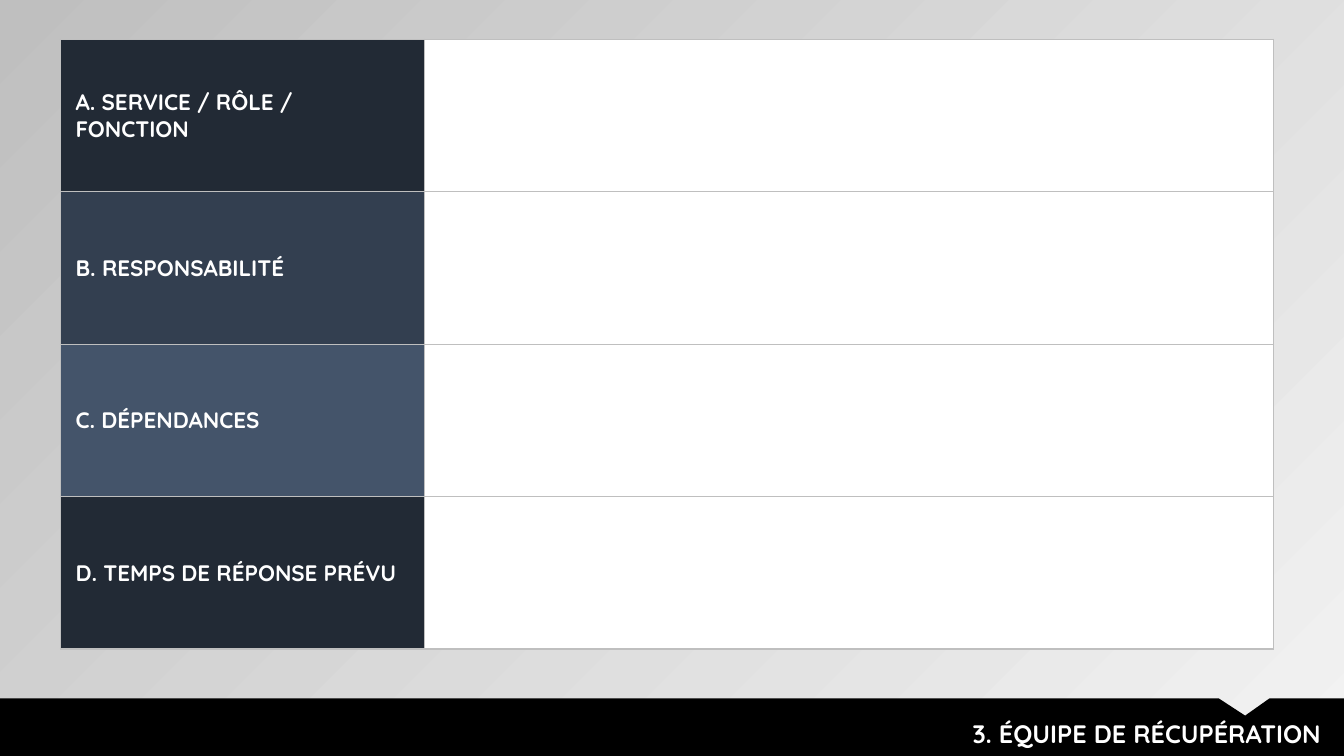
from lxml.etree import SubElement
from pptx import Presentation
from pptx.dml.color import RGBColor
from pptx.enum.text import MSO_ANCHOR as ANCHOR, PP_ALIGN as ALIGN
from pptx.oxml.ns import qn
from pptx.util import Inches, Pt

WIDTH, HEIGHT = 13.33, 7.5
FONT = "Quicksand"
BORDER = "BFBFBF"
ROWS = [
    ("A. SERVICE / RÔLE / FONCTION", "222A35"),
    ("B. RESPONSABILITÉ", "333F50"),
    ("C. DÉPENDANCES", "44546A"),
    ("D. TEMPS DE RÉPONSE PRÉVU", "222A35"),
]


def color(value):
    """Turn a hex string into a colour."""
    return RGBColor.from_string(value)


def fill_solid(obj, value):
    """Fill a shape or cell with one colour."""
    obj.fill.solid()
    obj.fill.fore_color.rgb = color(value)


def write(tf, text, size=16, value="FFFFFF", bold=True, align=ALIGN.LEFT):
    """Put one formatted paragraph in a text frame."""
    tf.word_wrap = True
    p = tf.paragraphs[0]
    p.alignment = align
    r = p.add_run()
    r.text = text
    r.font.name = FONT
    r.font.size = Pt(size)
    r.font.bold = bold
    r.font.color.rgb = color(value)


def add_borders(cell, value, width=1):
    """Draw all four borders of a cell, ahead of its fill."""
    tc_pr = cell._tc.get_or_add_tcPr()
    for i, side in enumerate(("a:lnL", "a:lnR", "a:lnT", "a:lnB")):
        ln = SubElement(tc_pr, qn(side), w=str(Pt(width)))
        solid = SubElement(ln, qn("a:solidFill"))
        SubElement(solid, qn("a:srgbClr"), val=value)
        tc_pr.insert(i, ln)


def set_background(s):
    """Shade the slide from the lower right to the upper left."""
    fill = s.background.fill
    fill.gradient()
    fill.gradient_angle = 135
    for stop, position, value in zip(fill.gradient_stops, (0, 1), ("F2F2F2", "BFBFBF")):
        stop.position = position
        stop.color.rgb = color(value)


def add_team_table(s, left, top, width, height, label_width=3.61):
    """Place the table of labels and empty answer cells."""
    box = [Inches(v) for v in (left, top, width, height)]
    table = s.shapes.add_table(len(ROWS), 2, *box).table
    table.first_row = table.horz_banding = False
    table.columns[0].width = Inches(label_width)
    table.columns[1].width = Inches(width - label_width)
    for i, (label, value) in enumerate(ROWS):
        table.rows[i].height = Inches(height / len(ROWS))
        for cell, fill in zip(table.rows[i].cells, (value, "FFFFFF")):
            fill_solid(cell, fill)
            add_borders(cell, BORDER)
        cell = table.cell(i, 0)
        cell.vertical_anchor = ANCHOR.MIDDLE
        cell.margin_left = cell.margin_right = Inches(0.15)
        cell.margin_top = cell.margin_bottom = Inches(0.15)
        write(cell.text_frame, label)


def add_footer(s, left, top, width, height):
    """Place the notched black band with the slide title on it."""
    right, bottom = left + width, top + height
    builder = s.shapes.build_freeform(Inches(left), Inches(top), scale=1)
    points = [
        (right - 1.24, top), (right - 0.98, top + 0.17), (right - 0.74, top),
        (right, top), (right, bottom), (left, bottom),
    ]
    builder.add_line_segments([(Inches(x), Inches(y)) for x, y in points], close=True)
    band = builder.convert_to_shape()
    band.shadow.inherit = False
    fill_solid(band, "000000")
    band.line.fill.background()

    title = s.shapes.title
    title.left, title.top = Inches(right - 9.19), Inches(top + 0.15)
    title.width, title.height = Inches(9.06), Inches(0.4)
    title.text_frame.vertical_anchor = ANCHOR.TOP
    write(title.text_frame, "3. ÉQUIPE DE RÉCUPÉRATION", size=18, align=ALIGN.RIGHT)
    band.element.addnext(title.element)


def main():
    """Build and save the slide."""
    prs = Presentation()
    prs.slide_width, prs.slide_height = Inches(WIDTH), Inches(HEIGHT)
    s = prs.slides.add_slide(prs.slide_layouts[5])
    set_background(s)
    add_team_table(s, 0.6, 0.39, 12.03, 6.05)
    add_footer(s, 0, 6.93, WIDTH, 0.57)
    prs.save("out.pptx")


if __name__ == "__main__":
    main()
